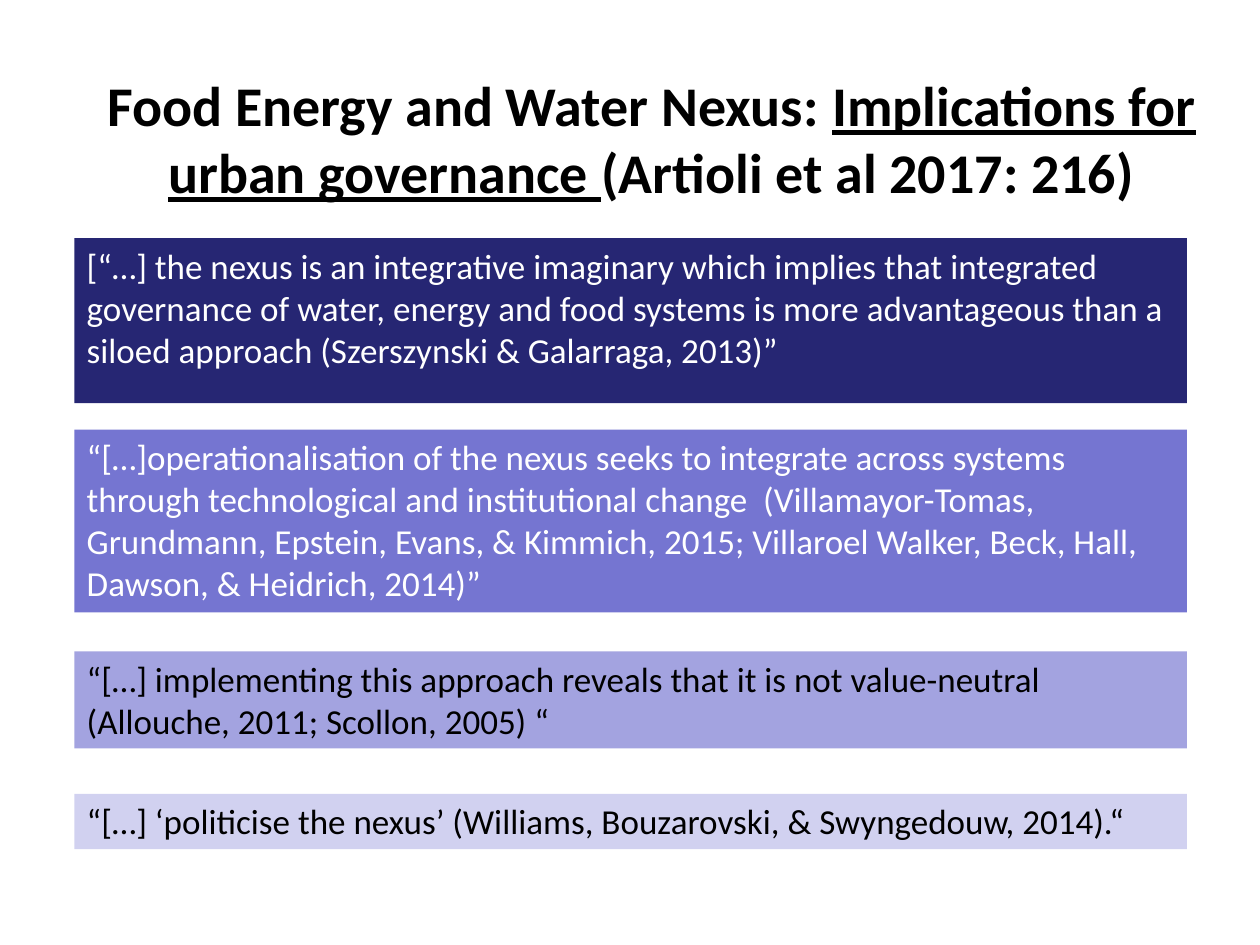
from dataclasses import dataclass

from pptx import Presentation
from pptx.dml.color import RGBColor
from pptx.enum.shapes import MSO_SHAPE
from pptx.enum.text import MSO_ANCHOR, MSO_AUTO_SIZE, PP_ALIGN
from pptx.util import Inches, Pt


@dataclass(frozen=True)
class Theme:
    font: str = "Calibri"
    head: int = 32
    body: int = 20
    black: str = "000000"
    white: str = "FFFFFF"
    navy: str = "262673"
    violet: str = "7575D1"
    lilac: str = "A3A3E0"
    pale: str = "D1D1F0"


THEME = Theme()
LEFT, WIDTH = 0.59, 8.83

# Title runs: text, underlined
TITLE = [
    ("Food Energy and Water Nexus: ", False),
    ("Implications for urban governance ", True),
    ("(Artioli et al 2017: 216)", False),
]

# Quotes: top, height, fill, ink, text
QUOTES = [
    (1.89, 1.31, THEME.navy, THEME.white,
     "[“…] the nexus is an integrative imaginary which implies that "
     "integrated governance of water, energy and food systems is more "
     "advantageous than a siloed approach (Szerszynski & Galarraga, 2013)”"),
    (3.41, 1.45, THEME.violet, THEME.white,
     "“[…]operationalisation of the nexus seeks to integrate across systems "
     "through technological and institutional change  (Villamayor-Tomas, "
     "Grundmann, Epstein, Evans, & Kimmich, 2015; Villaroel Walker, Beck, "
     "Hall, Dawson, & Heidrich, 2014)”"),
    (5.17, 0.77, THEME.lilac, THEME.black,
     "“[…] implementing this approach reveals that it is not value-neutral  "
     "(Allouche, 2011; Scollon, 2005) “"),
    (6.3, 0.44, THEME.pale, THEME.black,
     "“[…] ‘politicise the nexus’ (Williams, Bouzarovski, & Swyngedouw, "
     "2014).“"),
]


def style(font, size, ink):
    font.name = THEME.font
    font.size = Pt(size)
    font.color.rgb = RGBColor.from_string(ink)


def add_title(slide, left, top, width, height):
    title = slide.shapes.title
    title.left, title.top = Inches(left), Inches(top)
    title.width, title.height = Inches(width), Inches(height)
    frame = title.text_frame
    frame.auto_size = MSO_AUTO_SIZE.NONE
    frame.vertical_anchor = MSO_ANCHOR.MIDDLE
    frame.margin_left = Inches(0.1)
    frame.margin_top = frame.margin_bottom = Inches(0.06)
    frame.margin_right = Inches(0.1)
    para = frame.paragraphs[0]
    para.alignment = PP_ALIGN.CENTER
    for text, under in TITLE:
        run = para.add_run()
        run.text = text
        style(run.font, THEME.head, THEME.black)
        run.font.bold = True
        run.font.underline = under


def add_quote(slide, left, top, width, height, fill, ink, text):
    box = slide.shapes.add_shape(
        MSO_SHAPE.RECTANGLE,
        Inches(left), Inches(top), Inches(width), Inches(height))
    box.shadow.inherit = False
    box.fill.solid()
    box.fill.fore_color.rgb = RGBColor.from_string(fill)
    box.line.fill.background()
    frame = box.text_frame
    frame.word_wrap = True
    frame.vertical_anchor = MSO_ANCHOR.TOP
    frame.text = text
    para = frame.paragraphs[0]
    para.alignment = PP_ALIGN.LEFT
    style(para.runs[0].font, THEME.body, ink)


def main():
    deck = Presentation()
    deck.slide_width, deck.slide_height = Inches(10), Inches(7.5)
    slide = deck.slides.add_slide(deck.slide_layouts[5])

    # Heading
    add_title(slide, 0.67, 0.27, 9, 1.65)

    # Stack of quotes, dark to pale
    for top, height, fill, ink, text in QUOTES:
        add_quote(slide, LEFT, top, WIDTH, height, fill, ink, text)

    deck.save("out.pptx")


if __name__ == "__main__":
    main()
